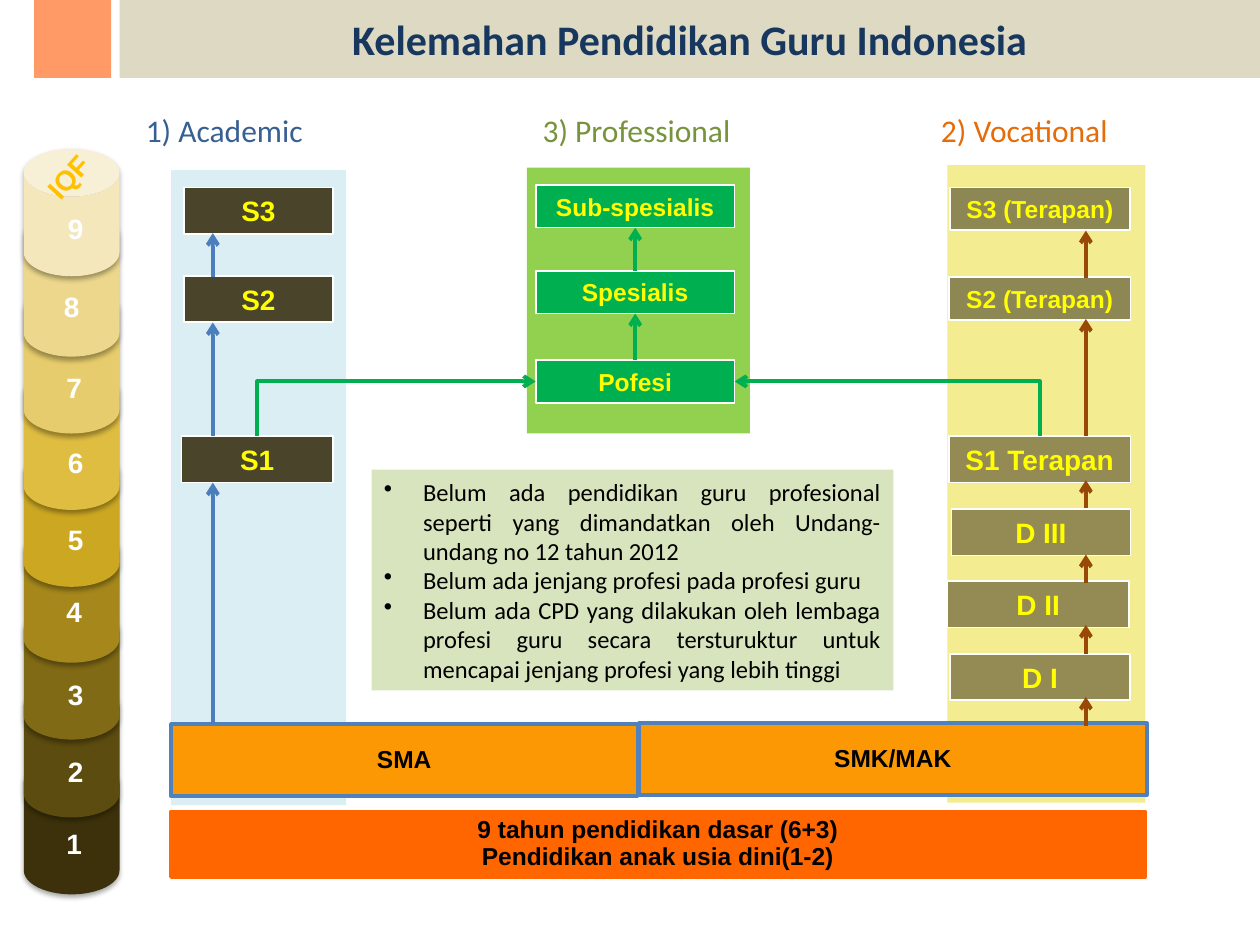
"""Build the slide on weaknesses of teacher education in Indonesia."""
from lxml import etree
from pptx import Presentation
from pptx import util as u
from pptx.dml.color import RGBColor
from pptx.enum import shapes, text
from pptx.oxml import parse_xml
from pptx.oxml.ns import nsdecls, qn

HUES = {
    "sky": "DBEEF4", "yellow": "F3EC91", "lime": "92D050", "brown": "4A452A",
    "olive": "948A54", "green": "00B050", "blue": "4B7EBC", "rust": "984807",
    "edge": "4F81BD", "amber": "FC9804", "red": "FF6600", "coral": "FF9966",
    "sand": "DDD9C3", "mint": "D7E4BD", "navy": "17375E", "gold": "FFC000",
    "bright": "FFFF00", "white": "FFFFFF", "black": "000000",
    "first": "376092", "second": "E46C0A", "third": "77933C",
}
BANDS = ["3C310A", "5D4C0F", "816A15", "A5871B", "CCA822", "DFBD41",
         "E6CC6C", "ECD78C", "F3E7BB"]
LEVELS = [(15.29, 2.74, 1.09, 16.54), (13.74, 2.74, 1.12, 15.09),
          (12.22, 2.69, 1.12, 13.54), (10.62, 2.74, 1.09, 11.86),
          (9.04, 2.79, 1.12, 10.41), (7.44, 2.84, 1.12, 8.86),
          (5.77, 2.97, 1.09, 7.34), (4.27, 2.92, 1.04, 5.72),
          (3, 2.57, 1.12, 4.14)]
NOTES = [
    "Belum ada pendidikan guru profesional seperti yang dimandatkan oleh "
    "Undang-undang no 12 tahun 2012",
    "Belum ada jenjang profesi pada profesi guru",
    "Belum ada CPD yang dilakukan oleh lembaga profesi guru secara "
    "tersturuktur untuk mencapai jenjang profesi yang lebih tinggi",
]


def rgb(name):
    """Turn a colour name or hex string into a colour."""
    return RGBColor.from_string(HUES.get(name, name))


def write(shape, words, size, hue, face="Arial", bold=True, align="CENTER", space=None):
    """Put formatted words into a shape."""
    shape.text_frame.text = words
    for para in shape.text_frame.paragraphs:
        para.alignment = getattr(text.PP_ALIGN, align)
        para.line_spacing = space
        font = para.font
        font.size, font.name, font.bold = u.Pt(size), face, bold
        font.color.rgb = rgb(hue)


def block(slide, at, fill, line=None, width=1, kind=shapes.MSO_SHAPE.RECTANGLE):
    """Draw a filled shape."""
    shape = slide.shapes.add_shape(kind, *map(u.Cm, at))
    shape.shadow.inherit = False
    shape.fill.solid()
    shape.fill.fore_color.rgb = rgb(fill)
    if line:
        shape.line.color.rgb = rgb(line)
        shape.line.width = u.Pt(width)
    else:
        shape.line.fill.background()
    return shape


def step(slide, words, at, fill, size=16):
    """Draw a white-edged box for one degree."""
    box = block(slide, at, fill, "white")
    box.text_frame.margin_left = box.text_frame.margin_right = 0
    write(box, words, size, "bright")
    return box


def label(slide, words, at, size, hue, **style):
    """Add a text box that does not wrap."""
    box = slide.shapes.add_textbox(*map(u.Cm, at))
    box.text_frame.word_wrap = False
    write(box, words, size, hue, **style)
    return box


def wire(slide, hue, ends=(0, 0, 0, 0), start=None, stop=None, bent=False):
    """Draw an arrow; a bent one carries its head at the start."""
    kind = shapes.MSO_CONNECTOR.ELBOW if bent else shapes.MSO_CONNECTOR.STRAIGHT
    line = slide.shapes.add_connector(kind, *map(u.Cm, ends))
    if start:
        line.begin_connect(*start)
        line.end_connect(*stop)
    line.line.color.rgb = rgb(hue)
    line.line.width = u.Pt(2.25)
    props = line._element.spPr
    if bent:
        props.find(qn("a:prstGeom")).set("prst", "bentConnector2")
    tip = "a:headEnd" if bent else "a:tailEnd"
    etree.SubElement(props.find(qn("a:ln")), qn(tip), type="arrow")
    etree.SubElement(props, qn("a:effectLst"))


def fade(shape, share):
    """Make a solid fill partly clear."""
    tint = shape._element.spPr.find(qn("a:solidFill"))[0]
    etree.SubElement(tint, qn("a:alpha"), val=str(share * 1000))


def shade(shape):
    """Give a shape a soft shadow below."""
    glow = shape._element.spPr.find(qn("a:effectLst"))
    glow.append(parse_xml(
        f'<a:outerShdw {nsdecls("a")} blurRad="{u.Pt(3.1)}" dist="{u.Pt(1.8)}" '
        'dir="5400000" rotWithShape="0"><a:srgbClr val="000000">'
        '<a:alpha val="35000"/></a:srgbClr></a:outerShdw>'))


def head(slide):
    """Format the title bar and its corner."""
    title = slide.shapes.title
    title.left, title.top, title.width, title.height = map(u.Cm, (2.41, 0, 22.99, 1.57))
    title.fill.solid()
    title.fill.fore_color.rgb = rgb("sand")
    write(title, "Kelemahan Pendidikan Guru Indonesia", 24, "navy", "Calibri")
    title.text_frame.vertical_anchor = text.MSO_ANCHOR.MIDDLE
    block(slide, (0.69, 0, 1.55, 1.57), "coral")


def tower(slide):
    """Stack the nine framework levels."""
    for band, (top, high, _, _) in zip(BANDS, LEVELS):
        can = block(slide, (0.48, top, 1.93, high), band, kind=shapes.MSO_SHAPE.CAN)
        can.adjustments[0] = 0.5
        shade(can)
    for rank, (_, _, left, top) in enumerate(LEVELS, 1):
        label(slide, str(rank), (left, top, 0.76, 0.94), 16, "white", align="LEFT")
    label(slide, "IQF", (0.15, 3.1, 2.44, 0.94), 16, "gold").rotation = -48


def paths(slide):
    """Draw the three paths, their boxes and their arrows."""
    for at, fill in [((19.1, 3.33, 3.99, 12.85), "yellow"),
                     ((3.45, 3.43, 3.53, 12.8), "sky"),
                     ((10.62, 3.38, 4.5, 5.36), "lime")]:
        block(slide, at, fill)
    for words, left, wide, hue in [("1) Academic", 2.69, 3.86, "first"),
                                   ("2) Vocational", 18.72, 4.06, "second"),
                                   ("3) Professional", 10.69, 4.34, "third")]:
        label(slide, words, (left, 2.11, wide, 1.02), 18, hue,
              face="Calibri", bold=False, align="LEFT")
    for words, top in [("S3", 3.78), ("S2", 5.56)]:
        step(slide, words, (3.71, top, 3, 0.94), "brown")
    left = step(slide, "S1", (3.66, 8.79, 3.05, 0.94), "brown")
    for words, x, top, wide in [("D I", 19.15, 13.18, 3.63), ("D II", 19.1, 11.71, 3.66),
                                ("D III", 19.18, 10.26, 3.61),
                                ("S1 Terapan", 19.13, 8.79, 3.66)]:
        right = step(slide, words, (x, top, wide, 0.94), "olive")
    for words, x, top, wide in [("S2 (Terapan)", 19.13, 5.59, 3.66),
                                ("S3 (Terapan)", 19.15, 3.78, 3.63)]:
        fade(step(slide, words, (x, top, wide, 0.86), "brown", 14), 60)
    ranks = [step(slide, words, (10.8, top, 4.01, 0.86), "green", 14)
             for words, top in [("Pofesi", 7.26), ("Spesialis", 5.46),
                                ("Sub-spesialis", 3.73)]]
    for low, high in zip(ranks, ranks[1:]):
        wire(slide, "green", start=(low, 0), stop=(high, 2))
    for side, box in [(1, left), (3, right)]:
        wire(slide, "green", start=(ranks[0], side), stop=(box, 0), bent=True)


def base(slide):
    """Draw the school levels at the foot."""
    early = block(slide, (3.45, 16.36, 19.63, 1.32), "red", "red", 2.25)
    write(early, "9 tahun pendidikan dasar (6+3)\nPendidikan anak usia dini(1-2)",
          14, "black", space=0.9)
    for words, at in [("SMK/MAK", (12.88, 14.58, 10.24, 1.45)),
                      ("SMA", (3.45, 14.6, 9.4, 1.45))]:
        write(block(slide, at, "amber", "edge", 2), words, 14, "black", space=0.9)


def climb(slide):
    """Draw the upright arrows of the outer paths."""
    routes = [("blue", 4.29, [(14.6, 9.73), (8.79, 6.5), (5.59, 4.7)]),
              ("rust", 21.89, [(14.63, 14.05), (13.18, 12.6), (11.76, 11.18),
                               (10.24, 9.68), (8.79, 6.43), (5.61, 4.65)])]
    for hue, x, spans in routes:
        for low, high in spans:
            wire(slide, hue, (x, low, x, high))


def notes(slide):
    """Add the bulleted panel."""
    panel = block(slide, (7.49, 9.47, 10.52, 4.45), "mint")
    write(panel, "\n".join(NOTES), 14, "black", "Calibri", False, "JUSTIFY")
    for para in panel.text_frame.paragraphs:
        props = para._p.get_or_add_pPr()
        props.set("marL", str(u.Cm(0.79)))
        props.set("indent", str(u.Cm(-0.79)))
        dot = parse_xml(f'<a:buChar {nsdecls("a")} char="•"/>')
        props.find(qn("a:defRPr")).addprevious(dot)


def main():
    """Build and save the slide."""
    deck = Presentation()
    deck.slide_width, deck.slide_height = u.Cm(25.4), u.Cm(19.05)
    slide = deck.slides.add_slide(deck.slide_layouts[5])
    for part in (head, tower, paths, base, climb, notes):
        part(slide)
    deck.save("out.pptx")


if __name__ == "__main__":
    main()
